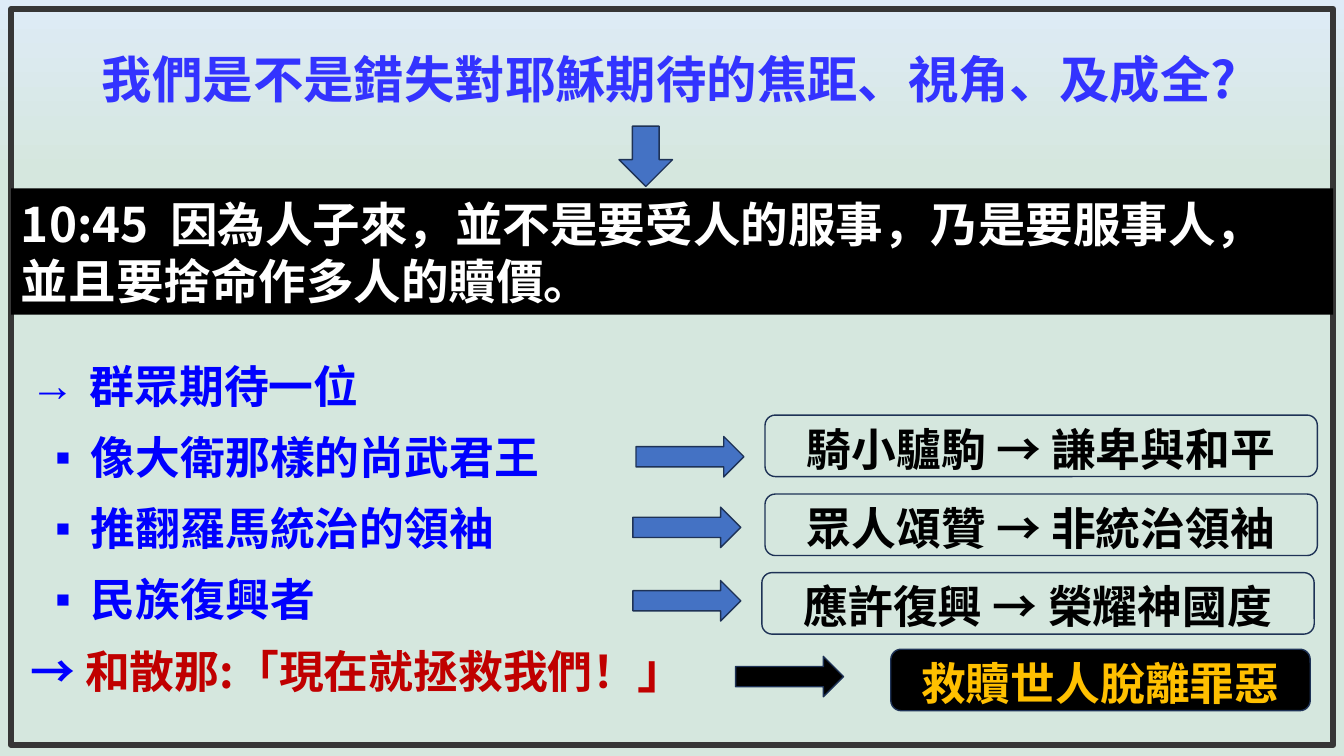
from lxml import etree
from pptx import Presentation
from pptx.dml.color import RGBColor
from pptx.enum.shapes import MSO_SHAPE
from pptx.enum.text import MSO_ANCHOR, PP_ALIGN
from pptx.oxml.ns import qn
from pptx.util import Cm, Pt

FONT = "Noto Sans CJK SC"
RECT, ROUND = MSO_SHAPE.RECTANGLE, MSO_SHAPE.ROUNDED_RECTANGLE
DOWN, RIGHT = MSO_SHAPE.DOWN_ARROW, MSO_SHAPE.RIGHT_ARROW
MIDDLE, TOP = MSO_ANCHOR.MIDDLE, MSO_ANCHOR.TOP
LEFT, CENTER = PP_ALIGN.LEFT, PP_ALIGN.CENTER
BLUE, NAVY, STEEL = "0000FF", "1E3256", "4472C4"
BLACK, WHITE, RED, GOLD = "000000", "FFFFFF", "C00000", "FFC000"
TITLE = "我們是不是錯失對耶穌期待的焦距、視角、及成全?"
VERSE = ["10:45\t因為人子來，並不是要受人的服事，乃是要服事人，",
         "並且要捨命作多人的贖價。"]
HOPES = ["像大衛那樣的尚武君王", "推翻羅馬統治的領袖", "民族復興者"]
# Text, left and top of the box, then the arrow's offset from it
REPLIES = [("騎小驢駒 → 謙卑與和平", 19.28, 10.46, -3.25, 0.54),
           ("眾人頌贊 → 非統治領袖", 19.28, 12.45, -3.33, 0.33),
           ("應許復興 → 榮耀神國度", 19.2, 14.43, -3.25, 0.2)]


def color(code):
    return RGBColor.from_string(code)


def add_run(para, text, size, code):
    run = para.add_run()
    run.text = text
    font = run.font
    font.name, font.size, font.bold = FONT, Pt(size), True
    font.color.rgb = color(code)
    east = etree.SubElement(run._r.get_or_add_rPr(), qn("a:ea"))
    east.set("typeface", FONT)


def set_frame(frame, anchor, side=0.25, edge=0.0):
    frame.word_wrap = True
    frame.vertical_anchor = anchor
    frame.margin_left = frame.margin_right = Cm(side)
    frame.margin_top = frame.margin_bottom = Cm(edge)


def add_shape(slide, kind, box, fill=None, line=NAVY, width=1):
    shape = slide.shapes.add_shape(kind, *map(Cm, box))
    shape.shadow.inherit = False
    if fill:
        shape.fill.solid()
        shape.fill.fore_color.rgb = color(fill)
    else:
        shape.fill.background()
    if line:
        shape.line.color.rgb = color(line)
        shape.line.width = Pt(width)
    else:
        shape.line.fill.background()
    return shape


def set_bullet(para, mark, margin, hang):
    props = para._p.get_or_add_pPr()
    props.set("marL", str(Cm(margin)))
    props.set("indent", str(-Cm(hang)))
    etree.SubElement(props, qn("a:buFont")).set("typeface", "Arial")
    etree.SubElement(props, qn("a:buChar")).set("char", mark)


def draw_back(slide):
    fill = slide.background.fill
    fill.gradient()
    fill.gradient_angle = 270
    for stop, (place, code) in zip(fill.gradient_stops,
                                   [(0, "DEEBF7"), (0.23, "D5E7DE")]):
        stop.position = place
        stop.color.rgb = color(code)


def draw_title(slide, box):
    title = slide.shapes.title
    title.left, title.top, title.width, title.height = map(Cm, box)
    set_frame(title.text_frame, MIDDLE)
    para = title.text_frame.paragraphs[0]
    para.alignment = CENTER
    add_run(para, TITLE, 36, "3333FF")


def draw_verse(slide, box):
    frame = add_shape(slide, RECT, box, BLACK, None).text_frame
    set_frame(frame, MIDDLE)
    para = frame.paragraphs[0]
    para.alignment, para.line_spacing = LEFT, Pt(40.7)
    tabs = etree.SubElement(para._p.get_or_add_pPr(), qn("a:tabLst"))
    etree.SubElement(tabs, qn("a:tab"), pos=str(Cm(3.76)), algn="l")
    add_run(para, VERSE[0], 34, WHITE)
    para.add_line_break()
    add_run(para, VERSE[1], 34, WHITE)


def draw_hopes(slide, box):
    frame = slide.shapes.add_textbox(*map(Cm, box)).text_frame
    set_frame(frame, TOP, edge=0.13)
    rows = [("→", 1.5, 1.5, [("群眾期待一位", 32, BLUE)])]
    rows += [("▪", 1.53, 0.9, [(hope, 32, BLUE)]) for hope in HOPES]
    rows.append((None, 0, 0, [("→ ", 32, BLUE),
                              ("和散那:「現在就拯救我們！", 32, RED),
                              ("」", 35, RED)]))
    for i, (mark, margin, hang, runs) in enumerate(rows):
        para = frame.add_paragraph() if i else frame.paragraphs[0]
        para.line_spacing = Pt(38.7 if mark else 40)
        para.space_before, para.space_after = Pt(6 if i else 0), Pt(6)
        if mark:
            set_bullet(para, mark, margin, hang)
        for run in runs:
            add_run(para, *run)


def draw_reply(slide, text, box, shift, fill=None, ink=BLACK, tint=STEEL):
    """Rounded box with text, and the arrow leading to it at an offset."""
    left, top = box[:2]
    frame = add_shape(slide, ROUND, box, fill).text_frame
    set_frame(frame, MIDDLE)
    para = frame.paragraphs[0]
    para.alignment, para.line_spacing = CENTER, Pt(42)
    add_run(para, text, 32, ink)
    add_shape(slide, RIGHT, (left + shift[0], top + shift[1], 2.72, 1.02), tint)


def main():
    deck = Presentation()
    deck.slide_width, deck.slide_height = Cm(33.87), Cm(19.05)
    slide = deck.slides.add_slide(deck.slide_layouts[5])
    draw_back(slide)
    draw_title(slide, (0.94, 0.84, 31.85, 2.29))
    add_shape(slide, RECT, (0.28, 0.23, 33.32, 18.54), None, "363636", 4.5)
    add_shape(slide, DOWN, (15.6, 3.18, 1.35, 1.52), STEEL)
    draw_verse(slide, (0.28, 4.75, 33.32, 3.18))
    draw_hopes(slide, (0.51, 8.9, 19.2, 9.07))
    for text, left, top, *shift in REPLIES:
        draw_reply(slide, text, (left, top, 13.92, 1.55), shift)
    draw_reply(slide, "救贖世人脫離罪惡", (22.45, 16.36, 10.57, 1.55),
               (-3.91, 0.18), BLACK, GOLD, BLACK)
    deck.save("out.pptx")


if __name__ == "__main__":
    main()
